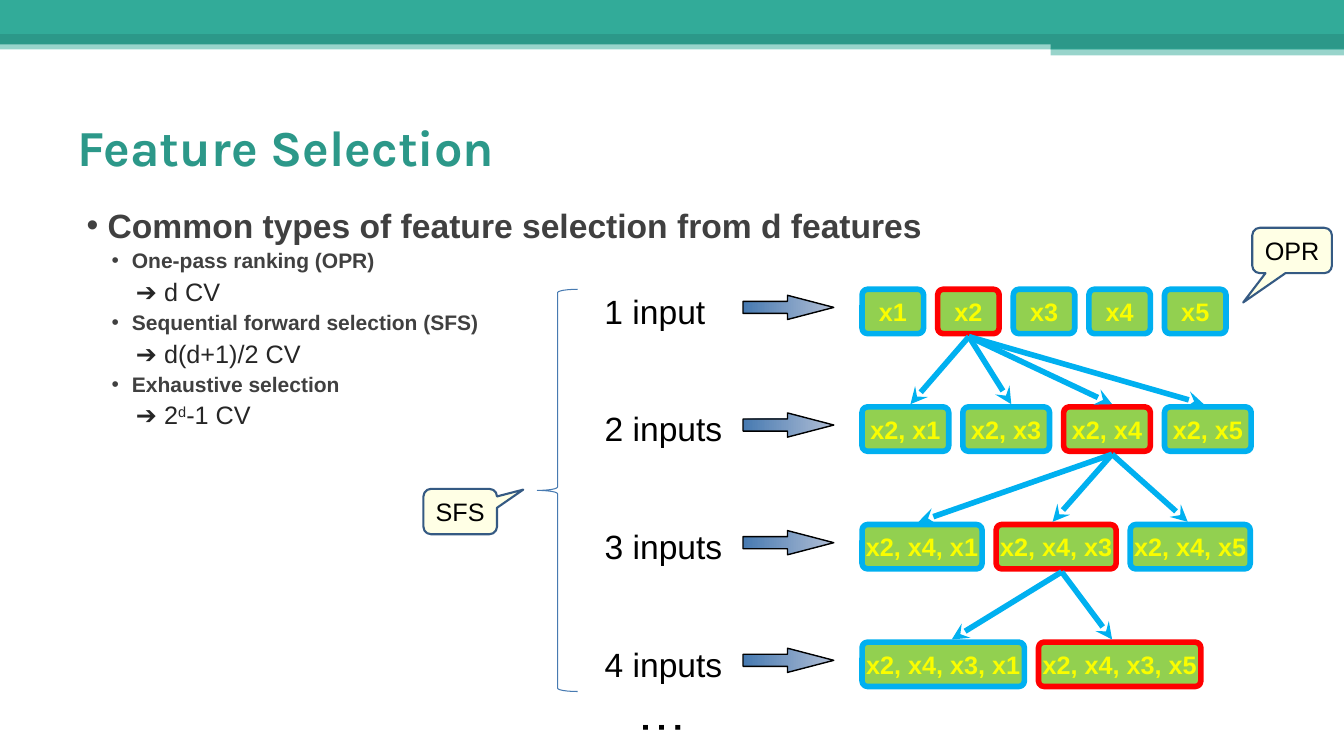
from lxml import etree
from pptx import Presentation, util as u
from pptx.dml import color as dml_color
from pptx.enum import shapes, text
from pptx.oxml import ns

Inches, Pt = u.Inches, u.Pt
SHAPE = shapes.MSO_SHAPE
CENTER = text.PP_ALIGN.CENTER

ROW_TOP, ROW_PITCH = 2.87, 1.167
BOX_LEFT, BOX_HEIGHT, BOX_GAP = 8.55, 0.44, 0.14
ROWS = [
    ("1 input", 1.21, 0.61, ["x1", "x2", "x3", "x4", "x5"], "x2"),
    ("2 inputs", 1.38, 0.86, ["x2, x1", "x2, x3", "x2, x4", "x2, x5"], "x2, x4"),
    ("3 inputs", 1.38, 1.19, ["x2, x4, x1", "x2, x4, x3", "x2, x4, x5"], "x2, x4, x3"),
    ("4 inputs", 1.38, 1.61, ["x2, x4, x3, x1", "x2, x4, x3, x5"], "x2, x4, x3, x5"),
]
BRANCHES = [
    (9.61, [9.03, 10.03, 11.03, 11.94]),
    (11.03, [9.11, 10.44, 11.78]),
    (10.53, [9.44, 11.03]),
]
SELECTION_TYPES = [
    ("One-pass ranking (OPR)", [("➔ d CV", False)]),
    ("Sequential forward selection (SFS)", [("➔ d(d+1)/2 CV", False)]),
    ("Exhaustive selection", [("➔ 2", False), ("d", True), ("-1 CV", False)]),
]


def rgb(value):
    return dml_color.RGBColor.from_string(value)


def add_child(parent, tag, **attributes):
    return etree.SubElement(parent, ns.qn(tag), attributes)


def write(paragraph, content, size=18, color="000000", bold=False, font="Arial",
          align=None, spacing=None, superscript=False):
    run = paragraph.add_run()
    run.text = content
    run.font.name, run.font.size, run.font.bold = font, Pt(size), bold
    run.font.color.rgb = rgb(color)
    if align is not None:
        paragraph.alignment = align
    if spacing is not None:
        paragraph.line_spacing = spacing
    if superscript:
        run._r.get_or_add_rPr().set("baseline", "30000")


def add_preset(slide, kind, place, fill=None, line=None, width=1, opacity=None, adjust=()):
    shape = slide.shapes.add_shape(kind, *map(Inches, place))
    shape.shadow.inherit = False
    if fill:
        shape.fill.solid()
        shape.fill.fore_color.rgb = rgb(fill)
    else:
        shape.fill.background()
    if opacity:
        solid = shape._element.spPr.find(ns.qn("a:solidFill"))
        add_child(solid[0], "a:alpha", val=str(opacity * 1000))
    if line:
        shape.line.color.rgb = rgb(line)
        shape.line.width = Pt(width)
    else:
        shape.line.fill.background()
    for index, value in enumerate(adjust):
        shape.adjustments[index] = value
    return shape


def label_shape(shape, content, **text_format):
    frame = shape.text_frame
    frame.word_wrap = False
    frame.vertical_anchor = text.MSO_ANCHOR.MIDDLE
    write(frame.paragraphs[0], content, align=CENTER, **text_format)


def add_text_box(slide, place, wrap=False):
    box = slide.shapes.add_textbox(*map(Inches, place))
    box.text_frame.word_wrap = wrap
    return box


def add_band(slide):
    for place, fill, opacity in [
        ((0, 0.4, 13.33, 0.09), "32AB99", 50),
        ((0, 0, 13.33, 0.34), "32AB99", None),
        ((0, 0.34, 13.33, 0.1), "2C9889", None),
        ((10.42, 0.39, 2.92, 0.1), "2C9889", None),
        ((10.42, 0.48, 2.92, 0.07), "32AB99", 50),
    ]:
        add_preset(slide, SHAPE.RECTANGLE, place, fill, opacity=opacity)


def add_title(slide, content):
    title = slide.shapes.title
    title.left, title.top, title.width, title.height = map(Inches, (0.67, 1.02, 12, 0.86))
    title.text_frame.vertical_anchor = text.MSO_ANCHOR.MIDDLE
    write(title.text_frame.paragraphs[0], content, size=36, color="2C9889", bold=True,
          font="Karla", align=text.PP_ALIGN.LEFT)


def indent(paragraph, level, left, hanging=0, bullet=False):
    paragraph.level = level
    properties = paragraph._p.get_or_add_pPr()
    properties.set("marL", str(Inches(left)))
    properties.set("indent", str(Inches(-hanging)))
    if bullet:
        add_child(add_child(properties, "a:buClr"), "a:srgbClr", val="404040")
        add_child(properties, "a:buFont", typeface="Arial")
        add_child(properties, "a:buChar", char="•")


def add_outline(slide):
    frame = add_text_box(slide, (0.67, 1.95, 12, 4.84), wrap=True).text_frame
    frame.margin_top = Inches(0.08)
    heading = frame.paragraphs[0]
    indent(heading, 0, 0.3, 0.21, bullet=True)
    write(heading, "Common types of feature selection from d features",
          size=24, color="404040", bold=True)
    for name, cost in SELECTION_TYPES:
        item, detail = frame.add_paragraph(), frame.add_paragraph()
        item.space_before = detail.space_before = Pt(2.2)
        indent(item, 1, 0.54, 0.2, bullet=True)
        write(item, name, size=15, color="404040", bold=True)
        indent(detail, 2, 0.58)
        for part, superscript in cost:
            write(detail, part, color="262626", superscript=superscript)


def add_row(slide, top, label, label_width, box_width, names, selected):
    for column, name in enumerate(names):
        left = BOX_LEFT + column * (box_width + BOX_GAP)
        line = "FF0000" if name == selected else "00B0F0"
        box = add_preset(slide, SHAPE.ROUNDED_RECTANGLE, (left, top, box_width, BOX_HEIGHT),
                         "92D050", line, 4, adjust=[0.125])
        label_shape(box, name, color="FAFD00", bold=True)
    caption = add_text_box(slide, (5.89, top + 0.09, label_width, 0.38))
    write(caption.text_frame.paragraphs[0], label, size=24, align=CENTER, spacing=0.65)
    pointer = add_preset(slide, SHAPE.RIGHT_ARROW, (7.37, top + 0.06, 0.9, 0.24),
                         line="000000", adjust=[0.5, 1.912])
    pointer.fill.gradient()
    pointer.fill.gradient_angle = 0
    for stop, shade in zip(pointer.fill.gradient_stops, ("477AB1", "B1BED5")):
        stop.color.rgb = rgb(shade)


def add_arrow(slide, *ends):
    arrow = slide.shapes.add_connector(shapes.MSO_CONNECTOR.STRAIGHT, *map(Inches, ends))
    arrow.line.color.rgb = rgb("00B0F0")
    arrow.line.width = Pt(4)
    add_child(arrow.line._get_or_add_ln(), "a:tailEnd", type="stealth")
    add_child(arrow._element.spPr, "a:effectLst")


def add_callout(slide, place, content, adjust):
    callout = add_preset(slide, SHAPE.ROUNDED_RECTANGULAR_CALLOUT, place, "FFFFCC", "355A83",
                         1.5, opacity=50, adjust=adjust)
    label_shape(callout, content)


def add_dots(slide):
    box = add_text_box(slide, (6.41, 6.91, 0.3, 0.62))
    box.rotation = 270
    frame = box.text_frame
    for paragraph in (frame.paragraphs[0], frame.add_paragraph(), frame.add_paragraph()):
        write(paragraph, ".", size=24, bold=True, align=CENTER, spacing=0.4)


def main():
    presentation = Presentation()
    presentation.slide_width, presentation.slide_height = Inches(13.33), Inches(7.5)
    slide = presentation.slides.add_slide(presentation.slide_layouts[5])
    add_band(slide)
    add_title(slide, "Feature Selection")
    add_outline(slide)
    for index, row in enumerate(ROWS):
        add_row(slide, ROW_TOP + index * ROW_PITCH, *row)
    for index, (start, targets) in enumerate(BRANCHES):
        top = ROW_TOP + index * ROW_PITCH
        for target in targets:
            add_arrow(slide, start, top + 0.47, target, top + 1.14)
    add_dots(slide)
    add_preset(slide, SHAPE.LEFT_BRACE, (5.33, 2.87, 0.4, 3.99), line="477AB1", width=0.75)
    add_callout(slide, (4.2, 4.85, 0.73, 0.45), "SFS", [0.856, -0.483, 0.167])
    add_callout(slide, (12.42, 2.26, 0.79, 0.45), "OPR", [-0.615, 1.147, 0.167])
    presentation.save("out.pptx")


if __name__ == "__main__":
    main()
